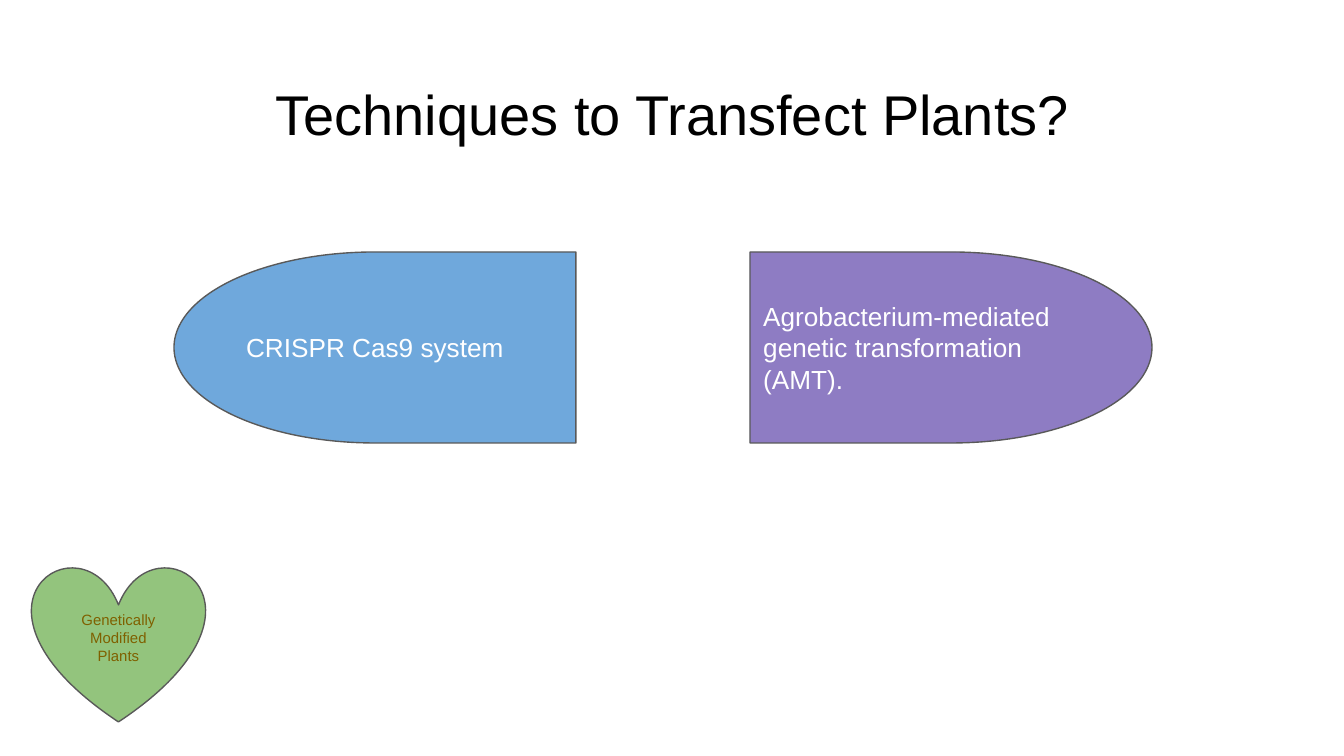
import pptx
import pptx.util
import pptx.dml.color
import pptx.enum.shapes
import pptx.enum.text

RGB = pptx.dml.color.RGBColor
SHAPE = pptx.enum.shapes.MSO_SHAPE
ALIGN = pptx.enum.text.PP_ALIGN
ANCHOR = pptx.enum.text.MSO_ANCHOR

BLACK = RGB(0x00, 0x00, 0x00)
WHITE = RGB(0xFF, 0xFF, 0xFF)
GRAY = RGB(0x59, 0x59, 0x59)
GREEN = RGB(0x93, 0xC4, 0x7D)
BROWN = RGB(0x7F, 0x60, 0x00)
PURPLE = RGB(0x8E, 0x7C, 0xC3)
BLUE = RGB(0x6F, 0xA8, 0xDC)

PX = 914400 / 134.4
SLIDE_WIDTH, SLIDE_HEIGHT = 1344, 756
TITLE = "Techniques to Transfect Plants?"
TITLE_AREA = (46, 66, 1253, 85)
TOPIC = "Genetically Modified Plants"
TOPIC_AREA = (32, 566, 173, 156)
TECHNIQUES = [
    ("CRISPR Cas9 system", BLUE, True),
    ("Agrobacterium-mediated genetic transformation (AMT).", PURPLE, False),
]
FIRST_LEFT, TECHNIQUE_TOP = 174, 252
TECHNIQUE_WIDTH, TECHNIQUE_HEIGHT = 402, 191
TECHNIQUE_GAP = 174


def emu(px):
    return pptx.util.Emu(round(px * PX))


def write(shape, text, size, color, align, anchor):
    frame = shape.text_frame
    frame.word_wrap = True
    frame.auto_size = pptx.enum.text.MSO_AUTO_SIZE.NONE
    frame.vertical_anchor = anchor
    frame.margin_left = frame.margin_right = pptx.util.Inches(0.1)
    frame.margin_top = frame.margin_bottom = pptx.util.Inches(0.1)
    para = frame.paragraphs[0]
    para.text = text
    para.alignment = align
    para.line_spacing = 1.0
    para.space_before = pptx.util.Pt(0)
    para.font.name = "Arial"
    para.font.size = pptx.util.Pt(size)
    para.font.color.rgb = color


def add_outlined(slide, kind, area, fill):
    shape = slide.shapes.add_shape(kind, *map(emu, area))
    shape.shadow.inherit = False
    shape.fill.solid()
    shape.fill.fore_color.rgb = fill
    shape.line.color.rgb = GRAY
    shape.line.width = pptx.util.Pt(0.75)
    return shape


def main():
    deck = pptx.Presentation()
    deck.slide_width = emu(SLIDE_WIDTH)
    deck.slide_height = emu(SLIDE_HEIGHT)
    slide = deck.slides.add_slide(deck.slide_layouts[5])

    title = slide.shapes.title
    title.left, title.top, title.width, title.height = map(emu, TITLE_AREA)
    write(title, TITLE, 30, BLACK, ALIGN.CENTER, ANCHOR.TOP)

    heart = add_outlined(slide, SHAPE.HEART, TOPIC_AREA, GREEN)
    write(heart, TOPIC, 8, BROWN, ALIGN.CENTER, ANCHOR.MIDDLE)

    for index, (name, fill, flipped) in enumerate(TECHNIQUES):
        left = FIRST_LEFT + index * (TECHNIQUE_WIDTH + TECHNIQUE_GAP)
        area = (left, TECHNIQUE_TOP, TECHNIQUE_WIDTH, TECHNIQUE_HEIGHT)
        technique = add_outlined(slide, SHAPE.FLOWCHART_DELAY, area, fill)
        if flipped:
            technique.element.spPr.xfrm.set("flipH", "1")
        write(technique, name, 14, WHITE, ALIGN.LEFT, ANCHOR.MIDDLE)

    deck.save("out.pptx")


if __name__ == "__main__":
    main()
